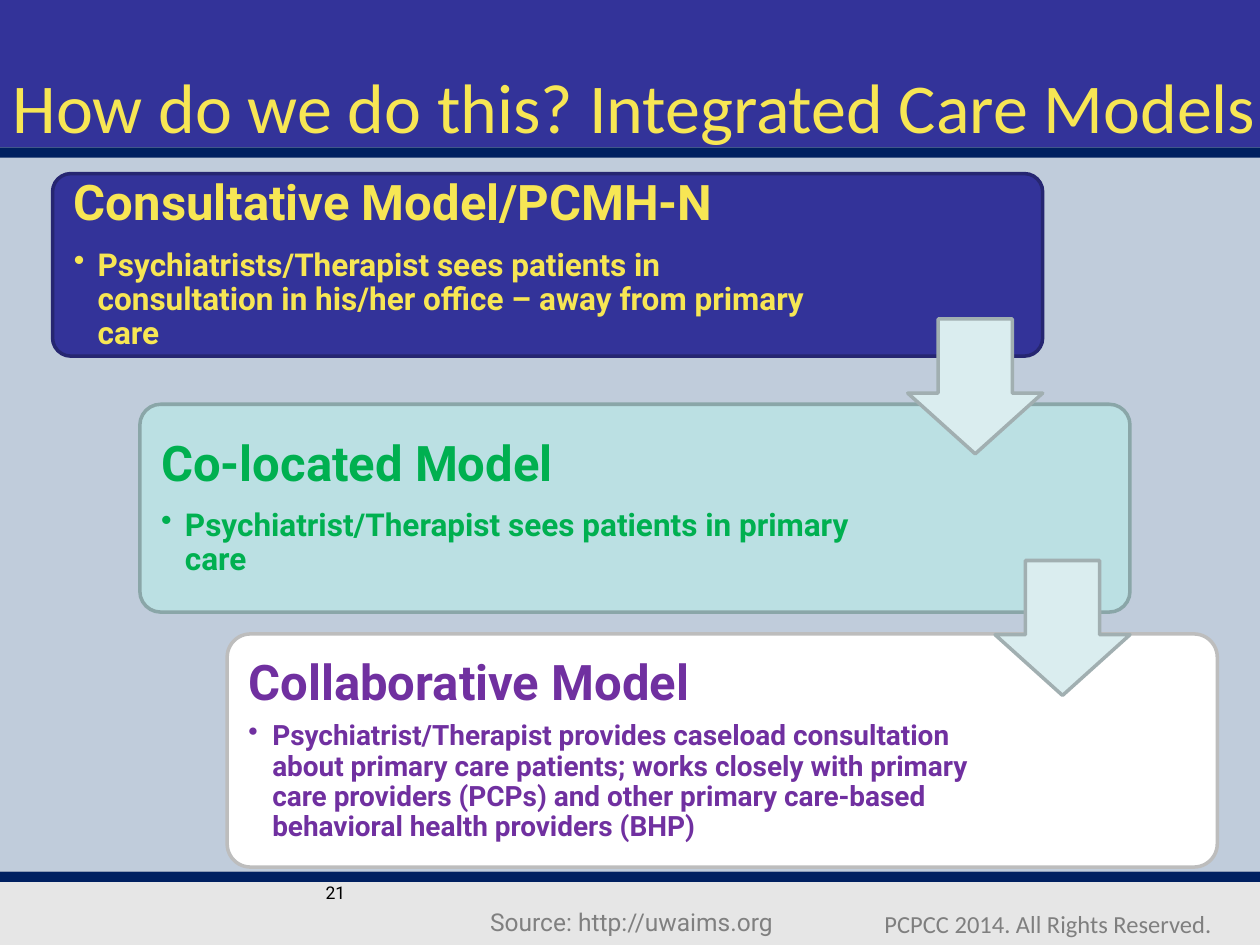
from lxml.etree import SubElement
from pptx import Presentation
from pptx.dml.color import RGBColor
from pptx.enum.shapes import MSO_SHAPE
from pptx.enum.text import MSO_ANCHOR, MSO_AUTO_SIZE, PP_ALIGN
from pptx.oxml.ns import qn
from pptx.util import Cm, Pt

NAVY = RGBColor(0x00, 0x20, 0x60)
INDIGO = RGBColor(0x33, 0x33, 0x99)
INK = RGBColor(0x26, 0x26, 0x71)
BLUE = RGBColor(0x4F, 0x81, 0xBD)
YELLOW = RGBColor(0xF7, 0xE6, 0x54)
TEAL = RGBColor(0xBB, 0xE0, 0xE3)
SLATE = RGBColor(0x8A, 0xA6, 0xA8)
GREEN = RGBColor(0x00, 0xB0, 0x50)
PURPLE = RGBColor(0x70, 0x30, 0xA0)
WHITE = RGBColor(0xFF, 0xFF, 0xFF)
SILVER = RGBColor(0xBD, 0xBD, 0xBD)
ICE = RGBColor(0xDA, 0xED, 0xEF)
STEEL = RGBColor(0xA1, 0xAF, 0xB1)
PAPER = RGBColor(0xE6, 0xE6, 0xE6)
GRAY = RGBColor(0x7F, 0x7F, 0x7F)
ASH = RGBColor(0x80, 0x80, 0x80)
BLACK = RGBColor(0x00, 0x00, 0x00)

WIDE, HIGH = 25.4, 19.05
LEFT, STEP, SPAN = 1.06, 1.76, 19.96
ARROW, PAD, INSET = 2.72, 0.13, 0.3

CARDS = [
    (3.5, 3.68, INDIGO, INK, YELLOW, 15.47, INSET, 10, 18,
     "Consultative Model/PCMH-N",
     "Psychiatrists/Therapist sees patients in consultation in his/her "
     "office – away from primary care"),
    (8.15, 4.19, TEAL, SLATE, GREEN, 15.24, INSET, 10, 18,
     "Co-located Model",
     "Psychiatrist/Therapist sees patients in primary care"),
    (12.78, 4.7, WHITE, SILVER, PURPLE, 15.21, 0, 6, 16,
     "Collaborative Model",
     "Psychiatrist/Therapist provides caseload consultation about primary "
     "care patients; works closely with primary care providers (PCPs) and "
     "other primary care-based behavioral health providers (BHP)"),
]
DROPS = [6.43, 11.3]


def add_form(slide, kind, box, fill, line=None, adjust=()):
    """Add a filled preset shape, outlined when a line colour is given."""
    form = slide.shapes.add_shape(kind, *map(Cm, box))
    form.shadow.inherit = False
    form.fill.solid()
    form.fill.fore_color.rgb = fill
    if line is None:
        form.line.fill.background()
    else:
        form.line.color.rgb = line
        form.line.width = Pt(2)
    for rank, value in enumerate(adjust):
        form.adjustments[rank] = value
    return form


def fade(form, share):
    """Set the opacity of a solid fill in percent."""
    color = form.element.spPr.find(qn("a:solidFill"))[0]
    SubElement(color, qn("a:alpha"), val=str(share * 1000))


def style(para, face, size, color, bold=False):
    """Format every run of a paragraph."""
    for run in para.runs:
        font = run.font
        font.name, font.size, font.bold = face, Pt(size), bold
        font.color.rgb = color


def add_label(slide, box, text, face, size, color, align=PP_ALIGN.LEFT):
    """Add a one-line text box."""
    frame = slide.shapes.add_textbox(*map(Cm, box)).text_frame
    frame.word_wrap = True
    frame.text = text
    para = frame.paragraphs[0]
    para.alignment = align
    style(para, face, size, color)


def add_bullet(para):
    """Give a paragraph a hanging bullet."""
    props = para._p.get_or_add_pPr()
    props.set("marL", str(Cm(0.48)))
    props.set("indent", str(-Cm(0.48)))
    SubElement(props, qn("a:buChar"), char="•")


def add_card(slide, left, card):
    """Add a rounded card with a heading and a bullet."""
    top, high, fill, line, color, width, right, gap, size, head, body = card
    add_form(slide, MSO_SHAPE.ROUNDED_RECTANGLE, (left, top, SPAN, high),
             fill, line, [0.1])
    box = (left + PAD, top + PAD, width, high - 2 * PAD)
    frame = slide.shapes.add_textbox(*map(Cm, box)).text_frame
    frame.word_wrap = True
    frame.vertical_anchor = MSO_ANCHOR.MIDDLE
    frame.margin_left = frame.margin_top = frame.margin_bottom = Cm(INSET)
    frame.margin_right = Cm(right)
    frame.text = head + "\n" + body
    title, item = frame.paragraphs
    for para, after, points in ((title, gap, 28), (item, 3, size)):
        para.line_spacing = 0.9
        para.space_after = Pt(after)
        style(para, "Roboto", points, color, True)
    item.level = 1
    add_bullet(item)


def add_bands(slide):
    """Add the header, the tinted middle and the two rules."""
    rect = MSO_SHAPE.RECTANGLE
    fade(add_form(slide, rect, (0, 2.97, WIDE, 14.6), BLUE), 25)
    add_form(slide, rect, (0, 0, WIDE, 2.97), INDIGO)
    for top in (17.57, 2.97):
        add_form(slide, rect, (0, top, WIDE, 0.21), NAVY)


def set_title(slide, text):
    """Fill the title placeholder and lift it above the bands."""
    title = slide.shapes.title
    title.left, title.top, title.width, title.height = map(
        Cm, (0, 1.07, 27.1, 2.11))
    frame = title.text_frame
    frame.text = text
    frame.auto_size = MSO_AUTO_SIZE.NONE
    frame.vertical_anchor = MSO_ANCHOR.MIDDLE
    frame.paragraphs[0].alignment = PP_ALIGN.LEFT
    style(frame.paragraphs[0], "Calibri", 40, YELLOW)
    title.element.getparent().append(title.element)


def main():
    """Build the slide and save it."""
    deck = Presentation()
    deck.slide_width, deck.slide_height = Cm(WIDE), Cm(HIGH)
    slide = deck.slides.add_slide(deck.slide_layouts[5])
    slide.background.fill.solid()
    slide.background.fill.fore_color.rgb = PAPER
    add_bands(slide)
    set_title(slide, "How do we do this? Integrated Care Models")
    add_label(slide, (17.58, 18.21, 7.82, 1.63),
              "PCPCC 2014. All Rights Reserved.", "Calibri", 14, GRAY)
    add_label(slide, (1.7, 17.65, 5.51, 1.02), "21", "Roboto", 10, BLACK,
              PP_ALIGN.RIGHT)
    add_label(slide, (9.63, 18.16, 6.55, 0.86),
              "Source: http://uwaims.org", "Roboto", 14, ASH)
    for rank, card in enumerate(CARDS):
        add_card(slide, LEFT + rank * STEP, card)
    for rank, top in enumerate(DROPS):
        left = LEFT + rank * STEP + SPAN - ARROW
        add_form(slide, MSO_SHAPE.DOWN_ARROW, (left, top, ARROW, ARROW),
                 ICE, STEEL, [0.55, 0.45])
    deck.save("out.pptx")


if __name__ == "__main__":
    main()
